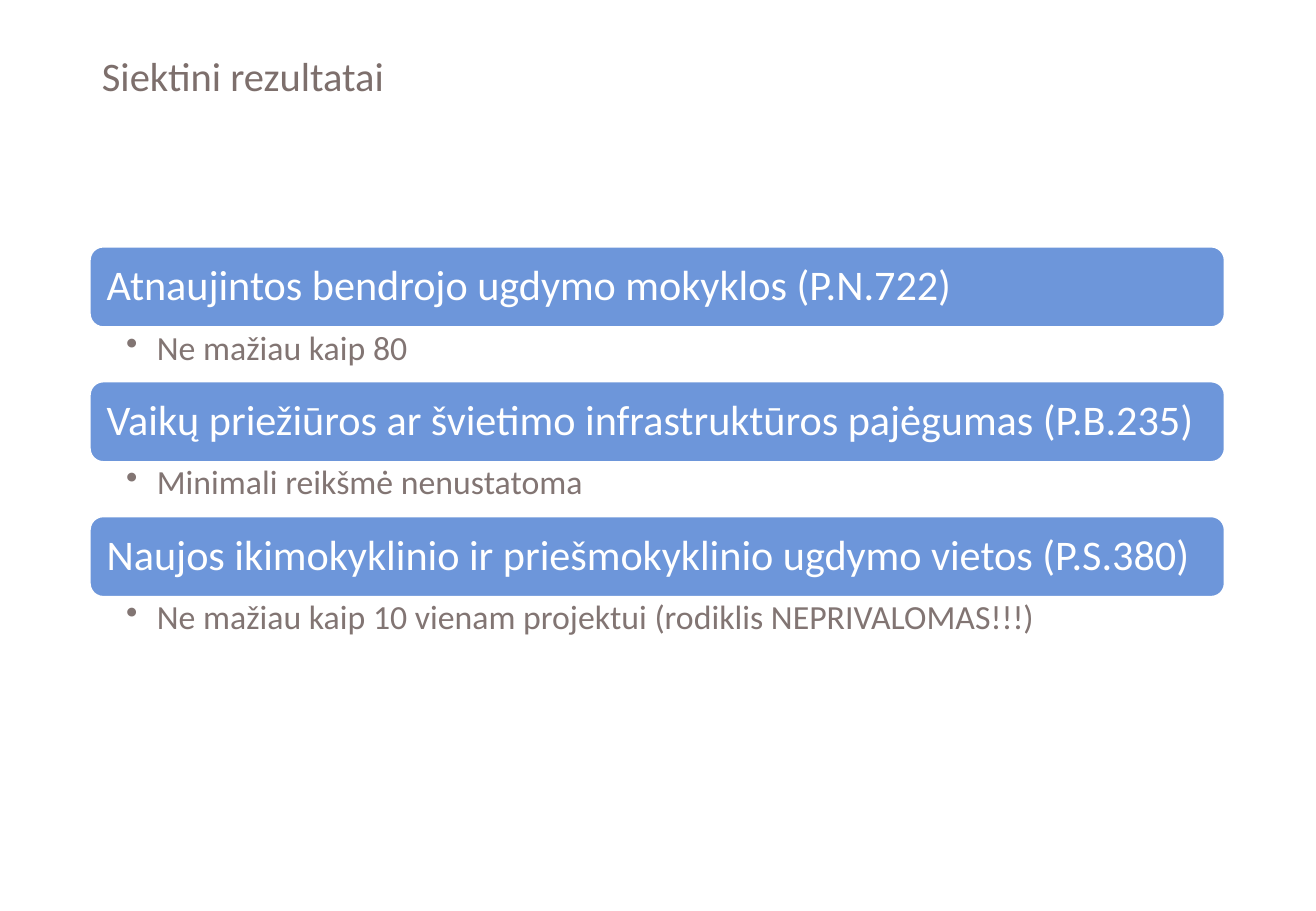
from dataclasses import dataclass

from lxml import etree
from pptx import Presentation
from pptx.dml.color import RGBColor
from pptx.enum.shapes import MSO_SHAPE
from pptx.enum.text import MSO_ANCHOR, MSO_AUTO_SIZE, PP_ALIGN
from pptx.oxml.ns import qn
from pptx.util import Cm, Pt

ROUNDED = MSO_SHAPE.ROUNDED_RECTANGLE
TOP, MIDDLE = MSO_ANCHOR.TOP, MSO_ANCHOR.MIDDLE
NO_FIT = MSO_AUTO_SIZE.NONE
LEFT = PP_ALIGN.LEFT

TITLE = "Siektini rezultatai"
RESULTS = [
    ("Atnaujintos bendrojo ugdymo mokyklos (P.N.722)", "Ne mažiau kaip 80"),
    ("Vaikų priežiūros ar švietimo infrastruktūros pajėgumas (P.B.235)",
     "Minimali reikšmė nenustatoma"),
    ("Naujos ikimokyklinio ir priešmokyklinio ugdymo vietos (P.S.380)",
     "Ne mažiau kaip 10 vienam projektui (rodiklis NEPRIVALOMAS!!!)"),
]


@dataclass(frozen=True)
class Theme:
    font: str = "Calibri"
    title_color: RGBColor = RGBColor(0x7D, 0x6F, 0x6C)
    target_color: RGBColor = RGBColor(0x82, 0x75, 0x73)
    bar_color: RGBColor = RGBColor(0x6D, 0x96, 0xDA)
    white: RGBColor = RGBColor(0xFF, 0xFF, 0xFF)
    title_size: Pt = Pt(24)
    indicator_size: Pt = Pt(25)
    target_size: Pt = Pt(20)


THEME = Theme()
MARGIN, WIDTH = Cm(1.88), Cm(23.72)
TITLE_TOP, TITLE_HEIGHT = Cm(0.89), Cm(1.5)
FIRST_TOP = Cm(5.16)
BAR_HEIGHT, TARGET_HEIGHT = Cm(1.68), Cm(1.14)
BULLET_INDENT = Cm(0.64)


def write(shape, text, size, color, anchor, insets):
    frame = shape.text_frame
    frame.auto_size = NO_FIT
    frame.word_wrap = True
    frame.vertical_anchor = anchor
    frame.margin_left, frame.margin_top, frame.margin_right, frame.margin_bottom = insets
    paragraph = frame.paragraphs[0]
    paragraph.alignment = LEFT
    paragraph.line_spacing = 0.9
    run = paragraph.add_run()
    run.text = text
    run.font.name = THEME.font
    run.font.size = size
    run.font.color.rgb = color
    return paragraph


def add_bullet(paragraph):
    paragraph.level = 1
    properties = paragraph._p.get_or_add_pPr()
    properties.set("marL", str(BULLET_INDENT))
    properties.set("indent", str(-BULLET_INDENT))
    etree.SubElement(properties, qn("a:buChar")).set("char", "•")


def add_result(slide, top, indicator, target):
    bar = slide.shapes.add_shape(ROUNDED, MARGIN, top, WIDTH, BAR_HEIGHT)
    bar.shadow.inherit = False
    bar.fill.solid()
    bar.fill.fore_color.rgb = THEME.bar_color
    bar.line.color.rgb = THEME.white
    bar.line.width = Pt(1)
    write(bar, indicator, THEME.indicator_size, THEME.white, MIDDLE,
          (Cm(0.27), Cm(0.25), Cm(0.27), Cm(0.25)))
    target_box = slide.shapes.add_textbox(MARGIN, top + BAR_HEIGHT, WIDTH, TARGET_HEIGHT)
    add_bullet(write(target_box, target, THEME.target_size, THEME.target_color, TOP,
                     (Cm(0.76), Cm(0.08), Cm(0.48), Cm(0.08))))


def main():
    presentation = Presentation()
    presentation.slide_width, presentation.slide_height = Cm(27.51), Cm(19.05)
    slide = presentation.slides.add_slide(presentation.slide_layouts[5])
    title = slide.shapes.title
    title.left, title.top, title.width, title.height = MARGIN, TITLE_TOP, WIDTH, TITLE_HEIGHT
    write(title, TITLE, THEME.title_size, THEME.title_color, MIDDLE,
          (Cm(0.25), Cm(0.13), Cm(0.25), Cm(0.13)))
    for index, (indicator, target) in enumerate(RESULTS):
        top = FIRST_TOP + index * (BAR_HEIGHT + TARGET_HEIGHT)
        add_result(slide, top, indicator, target)
    presentation.save("out.pptx")


if __name__ == "__main__":
    main()
